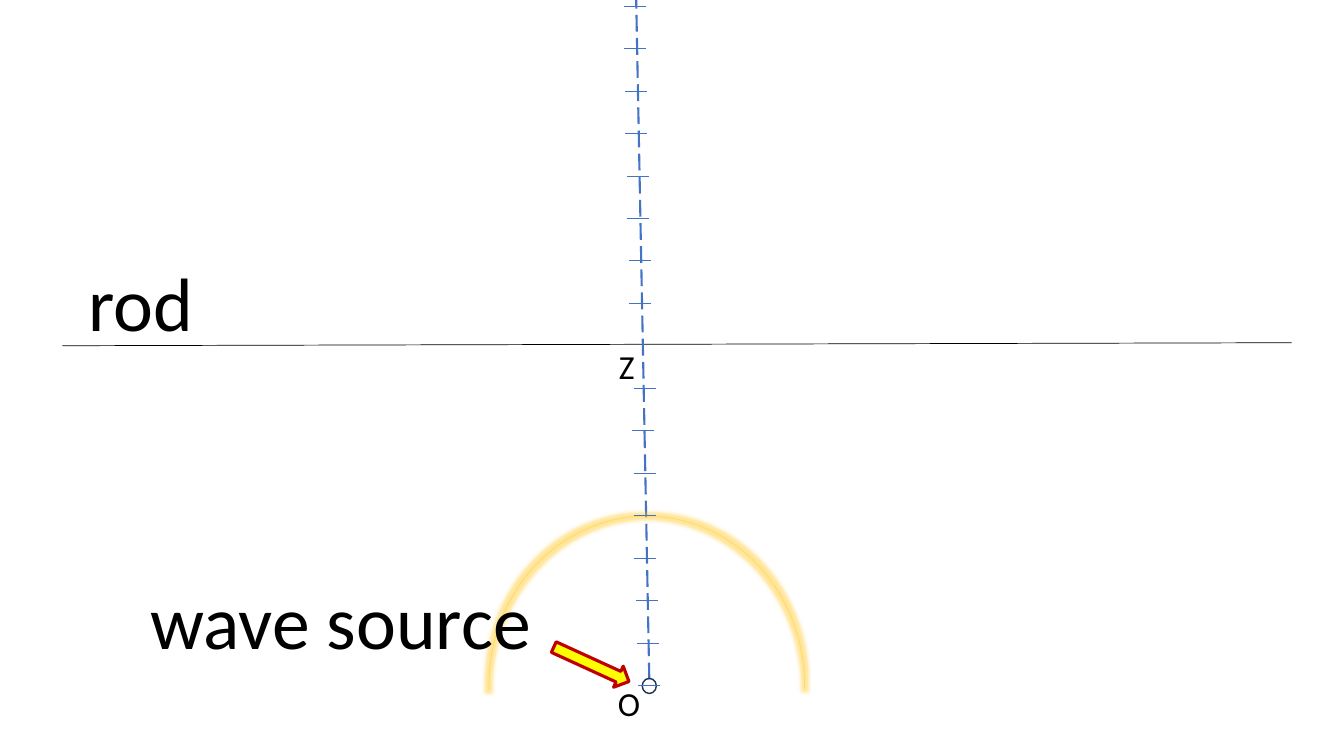
import pptx
import pptx.util
import pptx.dml.color
import pptx.enum.dml
import pptx.enum.shapes
import pptx.enum.text
import pptx.oxml
import pptx.oxml.ns

Inches = pptx.util.Inches
Pt = pptx.util.Pt
RGB = pptx.dml.color.RGBColor.from_string
SHAPE = pptx.enum.shapes.MSO_SHAPE
ALIGN = pptx.enum.text.PP_ALIGN
NS = pptx.oxml.ns.nsdecls("a")

THEME = {
    "font": "Calibri", "label": 24, "title": 54,
    "text": "000000", "outline": "FFC000", "rod": "000000", "axis": "4472C4",
    "wave": "FFD966", "glow": "FFC000", "source": "1E3256",
    "arrow": "FFFF00", "arrow_line": "C00000",
}


def add_line(x1, y1, x2, y2, color, width):
    c = s.shapes.add_connector(pptx.enum.shapes.MSO_CONNECTOR.STRAIGHT,
                               Inches(x1), Inches(y1), Inches(x2), Inches(y2))
    c.line.color.rgb = RGB(THEME[color])
    c.line.width = Pt(width)
    c._element.spPr.append(pptx.oxml.parse_xml(f"<a:effectLst {NS}/>"))
    return c


def add_text(text, x, y, w, h, size, align=ALIGN.LEFT):
    tf = s.shapes.add_textbox(Inches(x), Inches(y), Inches(w), Inches(h)).text_frame
    tf.word_wrap = True
    tf.auto_size = pptx.enum.text.MSO_AUTO_SIZE.SHAPE_TO_FIT_TEXT
    p = tf.paragraphs[0]
    p.alignment = align
    r = p.add_run()
    r.text = text
    p.font.name = THEME["font"]
    p.font.size = Pt(THEME[size])
    p.font.color.rgb = RGB(THEME["text"])
    return r


prs = pptx.Presentation()
prs.slide_width = Inches(13.33)
prs.slide_height = Inches(7.5)
s = prs.slides.add_slide(prs.slide_layouts[6])

add_line(0.62, 3.43, 12.81, 3.4, "rod", 0.5)
axis = add_line(6.44, 6.74, 6.31, 0, "axis", 1.5)
axis.line.dash_style = pptx.enum.dml.MSO_LINE.LONG_DASH

add_text("Z", 6.04, 3.38, 1.02, 0.5, "label")
add_text("O", 6.03, 6.73, 1.02, 0.5, "label")

wave = s.shapes.add_shape(SHAPE.ARC, Inches(4.85), Inches(5.12), Inches(3.13), Inches(3.35))
wave.adjustments[0] = 107.01
wave.adjustments[1] = 0.7
wave.fill.background()
wave.line.color.rgb = RGB(THEME["wave"])
wave.line.width = Pt(0.5)
wave.shadow.inherit = False
wave._element.spPr.find(pptx.oxml.ns.qn("a:effectLst")).append(pptx.oxml.parse_xml(
    f'<a:glow {NS} rad="{Pt(5)}"><a:srgbClr val="{THEME["glow"]}">'
    '<a:alpha val="40000"/></a:srgbClr></a:glow>'))

source = s.shapes.add_shape(SHAPE.OVAL, Inches(6.37), Inches(6.73), Inches(0.14), Inches(0.15))
source.fill.background()
source.line.color.rgb = RGB(THEME["source"])
source.line.width = Pt(1)
source.shadow.inherit = False

tick_lefts = [6.33, 6.32, 6.31, 6.29, 6.29, 6.29, 6.27, 6.29, None,
              6.24, 6.24, 6.22, 6.22, 6.2, 6.2, 6.19, 6.19]
tick_gap = (6.8 - 0.06) / (len(tick_lefts) - 1)
for i, x in enumerate(tick_lefts):
    if x is not None:
        y = 6.8 - i * tick_gap
        add_line(x, y, x + 0.22, y, "axis", 0.5)

arrow = s.shapes.add_shape(SHAPE.DOWN_ARROW, Inches(5.75), Inches(6.18), Inches(0.23), Inches(0.82))
arrow.rotation = 294.6
arrow.fill.solid()
arrow.fill.fore_color.rgb = RGB(THEME["arrow"])
arrow.line.color.rgb = RGB(THEME["arrow_line"])
arrow.line.width = Pt(2.25)
arrow.shadow.inherit = False

for text, x, y, w in [("wave source", 1.13, 5.64, 4.5), ("rod", 0.62, 2.49, 1.55)]:
    r = add_text(text, x, y, w, 1.01, "title", ALIGN.CENTER)
    r._r.get_or_add_rPr().insert(0, pptx.oxml.parse_xml(
        f'<a:ln {NS} w="{Pt(1)}"><a:solidFill><a:srgbClr val="{THEME["outline"]}"/>'
        '</a:solidFill></a:ln>'))

prs.save("out.pptx")
